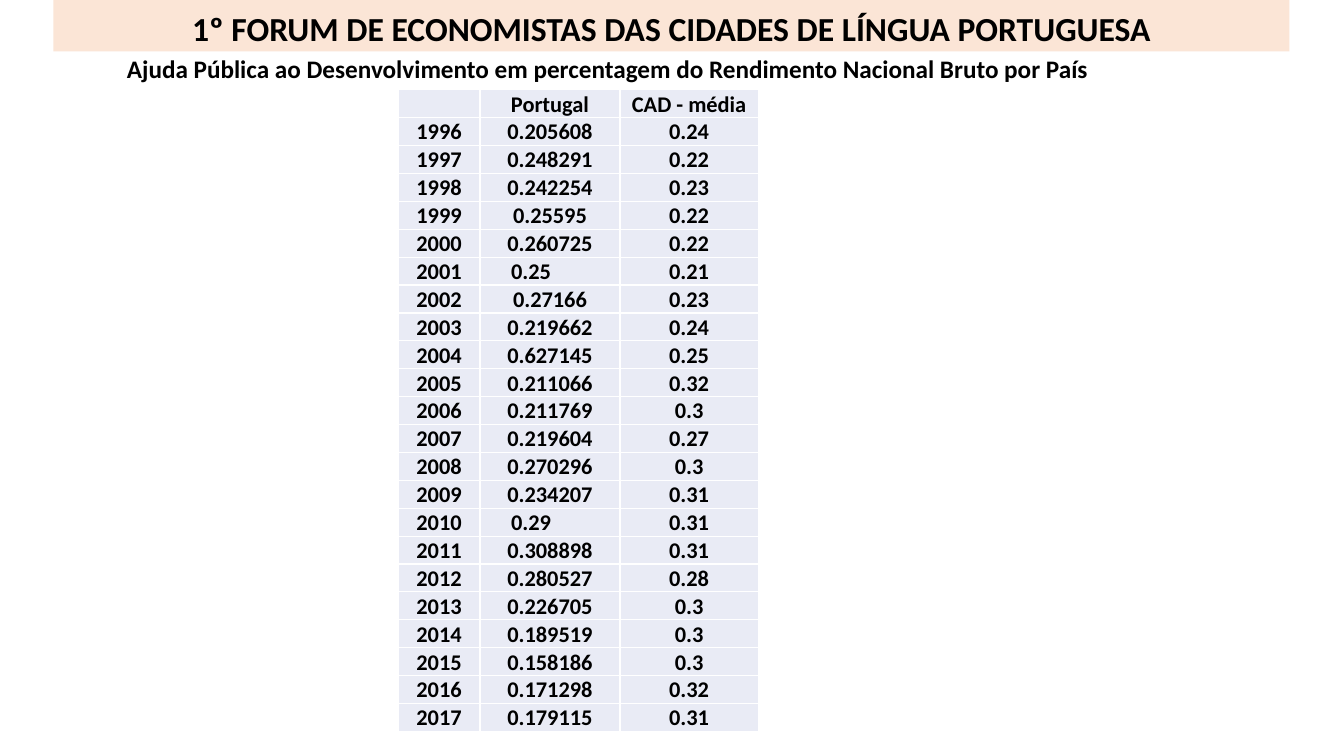
import pptx
import pptx.util
import pptx.dml.color
import pptx.enum.text
import pptx.oxml
import pptx.oxml.ns
from dataclasses import dataclass

Inches = pptx.util.Inches
Pt = pptx.util.Pt
Align = pptx.enum.text.PP_ALIGN
Anchor = pptx.enum.text.MSO_ANCHOR


@dataclass(frozen=True)
class Theme:
    font: str = "Calibri"
    ink: str = "000000"
    band: str = "FBE5D6"
    cell: str = "E9EBF5"
    rule: str = "FFFFFF"
    head: int = 24
    sub: int = 18
    body: int = 16


RATES = [
    ("0.205608", "0.24"), ("0.248291", "0.22"), ("0.242254", "0.23"),
    ("0.25595", "0.22"), ("0.260725", "0.22"), ("0.25", "0.21"),
    ("0.27166", "0.23"), ("0.219662", "0.24"), ("0.627145", "0.25"),
    ("0.211066", "0.32"), ("0.211769", "0.3"), ("0.219604", "0.27"),
    ("0.270296", "0.3"), ("0.234207", "0.31"), ("0.29", "0.31"),
    ("0.308898", "0.31"), ("0.280527", "0.28"), ("0.226705", "0.3"),
    ("0.189519", "0.3"), ("0.158186", "0.3"), ("0.171298", "0.32"),
    ("0.179115", "0.31"),
]


def color(code):
    return pptx.dml.color.RGBColor.from_string(code)


def write(frame, text, theme, size, align=Align.LEFT, line=None, after=None):
    para = frame.paragraphs[0]
    para.alignment = align
    if line:
        para.line_spacing = line
    if after:
        para.space_after = Pt(after)
    if not text:
        para._p.get_or_add_endParaRPr().set("sz", str(size * 100))
        return
    run = para.add_run()
    run.text = text
    font = run.font
    font.name = theme.font
    font.size = Pt(size)
    font.bold = True
    font.color.rgb = color(theme.ink)


class Deck:
    def __init__(self, theme):
        self.theme = theme
        self.show = pptx.Presentation()
        self.show.slide_width = Inches(13.33)
        self.show.slide_height = Inches(7.5)
        self.slide = self.show.slides.add_slide(self.show.slide_layouts[5])

    def title(self, text, left, top, width, height):
        box = self.slide.shapes.title
        box.left, box.top = Inches(left), Inches(top)
        box.width, box.height = Inches(width), Inches(height)
        box.fill.solid()
        box.fill.fore_color.rgb = color(self.theme.band)
        frame = box.text_frame
        frame.auto_size = pptx.enum.text.MSO_AUTO_SIZE.NONE
        frame.vertical_anchor = Anchor.TOP
        write(frame, text, self.theme, self.theme.head, Align.CENTER, 1.07, 8)

    def label(self, text, left, top, width, height):
        box = self.slide.shapes.add_textbox(
            Inches(left), Inches(top), Inches(width), Inches(height))
        box.text_frame.word_wrap = True
        write(box.text_frame, text, self.theme, self.theme.sub)

    def table(self, rows, left, top, widths, height):
        grid = self.slide.shapes.add_table(
            len(rows), len(widths), Inches(left), Inches(top),
            Inches(sum(widths)), Inches(height)).table
        grid.first_row = grid.horz_banding = False
        for col, width in zip(grid.columns, widths):
            col.width = Inches(width)
        for line, row in zip(grid.rows, rows):
            line.height = Inches(height / len(rows))
            for cell, text in zip(line.cells, row):
                self.fill(cell, text)
        return grid

    def fill(self, cell, text):
        cell.fill.solid()
        cell.fill.fore_color.rgb = color(self.theme.cell)
        cell.margin_left = cell.margin_right = cell.margin_top = Inches(0.01)
        cell.margin_bottom = 0
        cell.vertical_anchor = Anchor.BOTTOM
        write(cell.text_frame, text, self.theme, self.theme.body, Align.CENTER)
        props = cell._tc.get_or_add_tcPr()
        for spot, side in enumerate("LRTB"):
            props.insert(spot, pptx.oxml.parse_xml(
                f'<a:ln{side} {pptx.oxml.ns.nsdecls("a")} w="{Pt(1)}">'
                f'<a:solidFill><a:srgbClr val="{self.theme.rule}"/></a:solidFill>'
                f'</a:ln{side}>'))

    def indent(self, cell, left):
        cell.margin_left = Inches(left)
        cell.text_frame.paragraphs[0].alignment = Align.LEFT


def main():
    deck = Deck(Theme())
    deck.title("1º FORUM DE ECONOMISTAS DAS CIDADES DE LÍNGUA PORTUGUESA",
               0.53, 0, 12.26, 0.51)
    deck.label("Ajuda Pública ao Desenvolvimento em percentagem do "
               "Rendimento Nacional Bruto por País", 1.16, 0.48, 11.97, 0.4)
    first = 1996
    rows = [("", "Portugal", "CAD - média")]
    rows += [(str(year), *pair) for year, pair in enumerate(RATES, first)]
    grid = deck.table(rows, 3.95, 0.89, (0.81, 1.39, 1.37), 6.36)
    for year in (2001, 2010):
        deck.indent(grid.cell(year - first + 1, 1), 0.31)
    deck.show.save("out.pptx")


if __name__ == "__main__":
    main()
